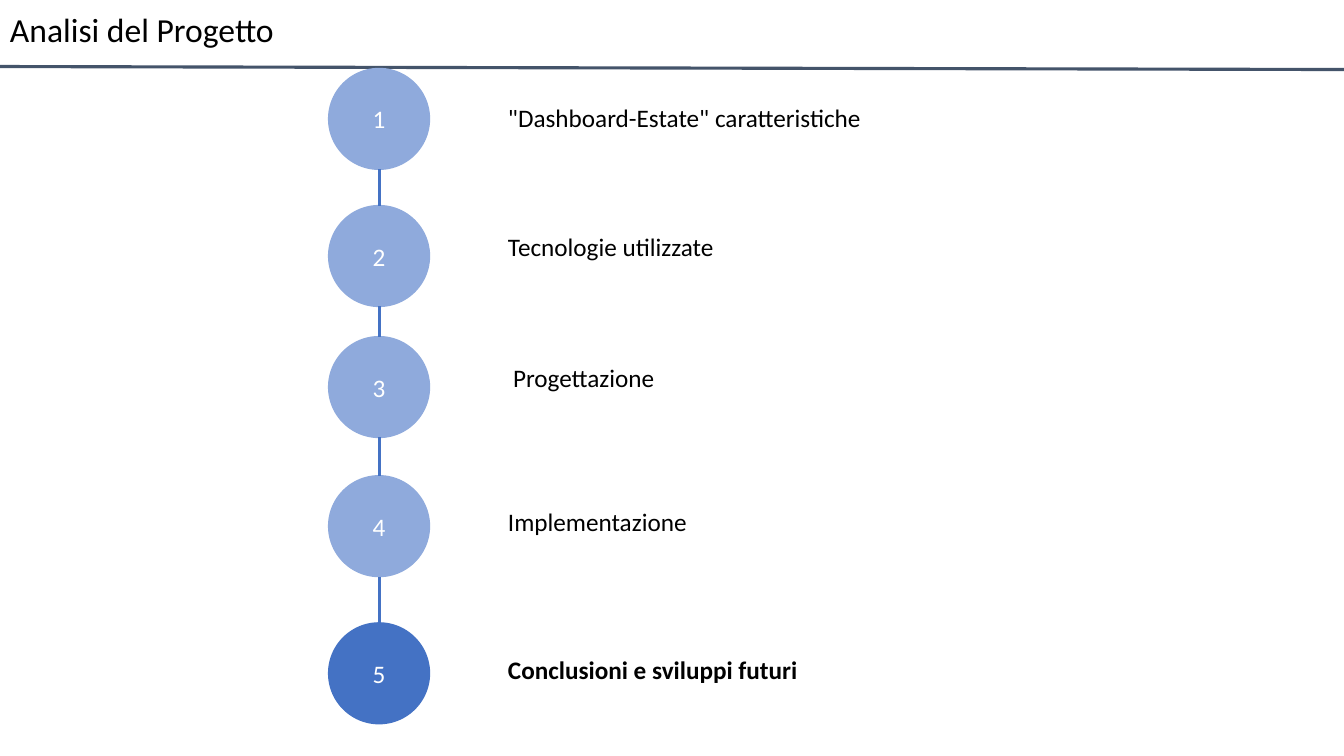
from pptx import Presentation
from pptx.dml.color import RGBColor
from pptx.enum.shapes import MSO_CONNECTOR, MSO_SHAPE
from pptx.enum.text import MSO_ANCHOR, PP_ALIGN
from pptx.oxml.ns import qn
from pptx.util import Inches, Pt
from lxml.etree import SubElement

WIDTH, HEIGHT = 13.33, 7.5
FONT = "Calibri"
BLACK = RGBColor(0x00, 0x00, 0x00)
WHITE = RGBColor(0xFF, 0xFF, 0xFF)
SLATE = RGBColor(0x44, 0x54, 0x6A)
BLUE = RGBColor(0x44, 0x72, 0xC4)
LIGHT_BLUE = RGBColor(0x8F, 0xAA, 0xDC)

DIAMETER = 1
LABEL_HEIGHT = 0.4
LABEL_WIDTH = 4.97
LABEL_OFFSET = 1.68
CURRENT_STEP = 5
STEPS = [
    # circle top, label top, label indent, label
    (0, 0.29, 0, '"Dashboard-Estate" caratteristiche'),
    (1.36, 1.57, 0, "Tecnologie utilizzate"),
    (2.66, 2.87, 0.05, "Progettazione"),
    (4.04, 4.29, 0, "Implementazione"),
    (5.5, 5.76, 0, "Conclusioni e sviluppi futuri"),
]


def write(frame, wording, size, color, bold=False):
    paragraph = frame.paragraphs[0]
    paragraph.text = wording
    paragraph.font.name = FONT
    paragraph.font.size = Pt(size)
    paragraph.font.color.rgb = color
    paragraph.font.bold = bold
    return paragraph


def add_label(slide, left, top, width, height, wording, size, bold=False):
    label = slide.shapes.add_textbox(
        Inches(left), Inches(top), Inches(width), Inches(height))
    label.text_frame.word_wrap = True
    write(label.text_frame, wording, size, BLACK, bold)
    return label.text_frame


def add_rule(slide, start, end, color):
    rule = slide.shapes.add_connector(
        MSO_CONNECTOR.STRAIGHT, *map(Inches, start + end))
    rule.line.color.rgb = color
    rule.line.width = Pt(2.25)
    SubElement(rule._element.spPr, qn("a:effectLst"))


def add_header(slide, left, top, width, height):
    title = add_label(slide, left, top, width, height, "Analisi del Progetto", 24)
    title.vertical_anchor = MSO_ANCHOR.MIDDLE
    title.paragraphs[0].line_spacing = 0.9
    add_rule(slide, (-0.05, top + height + 0.02), (WIDTH, top + height + 0.05), SLATE)


def add_step_circle(slide, left, top, number):
    color = BLUE if number == CURRENT_STEP else LIGHT_BLUE
    circle = slide.shapes.add_shape(
        MSO_SHAPE.OVAL, Inches(left), Inches(top), Inches(DIAMETER), Inches(DIAMETER))
    circle.shadow.inherit = False
    circle.fill.solid()
    circle.fill.fore_color.rgb = color
    circle.line.color.rgb = color
    circle.line.width = Pt(1)
    circle.text_frame.vertical_anchor = MSO_ANCHOR.MIDDLE
    write(circle.text_frame, str(number), 18, WHITE).alignment = PP_ALIGN.CENTER


def add_agenda(slide, left, top):
    for number, (circle_top, label_top, indent, wording) in enumerate(STEPS, 1):
        add_step_circle(slide, left, top + circle_top, number)
        add_label(slide, left + LABEL_OFFSET + indent, top + label_top,
                  LABEL_WIDTH, LABEL_HEIGHT, wording, 18, number == CURRENT_STEP)
    center = left + DIAMETER / 2
    for upper, lower in zip(STEPS, STEPS[1:]):
        add_rule(slide, (center, top + upper[0] + DIAMETER),
                 (center, top + lower[0]), BLUE)


def main():
    deck = Presentation()
    deck.slide_width, deck.slide_height = Inches(WIDTH), Inches(HEIGHT)
    slide = deck.slides.add_slide(deck.slide_layouts[6])
    add_header(slide, 0, -0.01, 12.41, 0.65)
    add_agenda(slide, 3.26, 0.68)
    deck.save("out.pptx")


if __name__ == "__main__":
    main()
